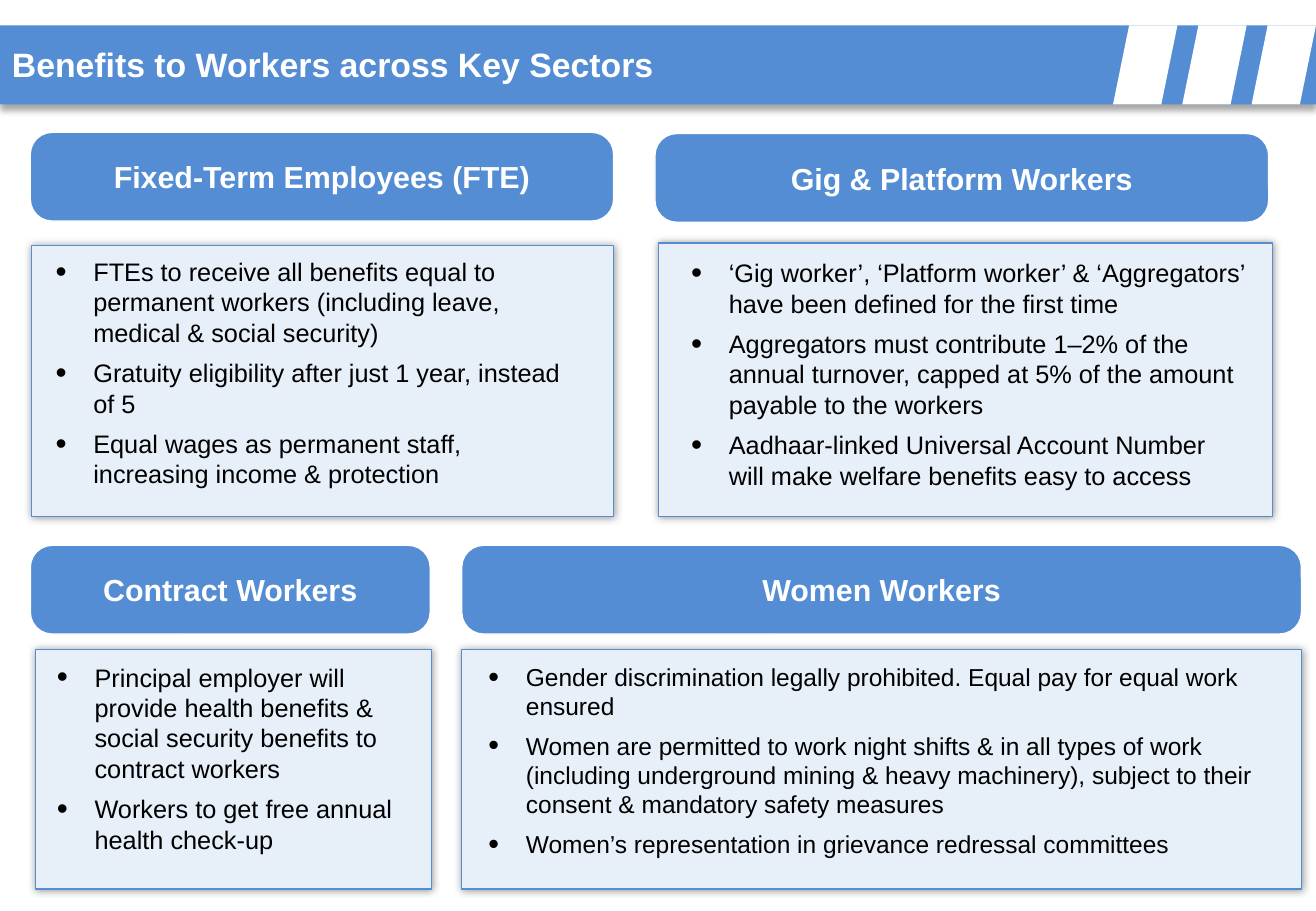
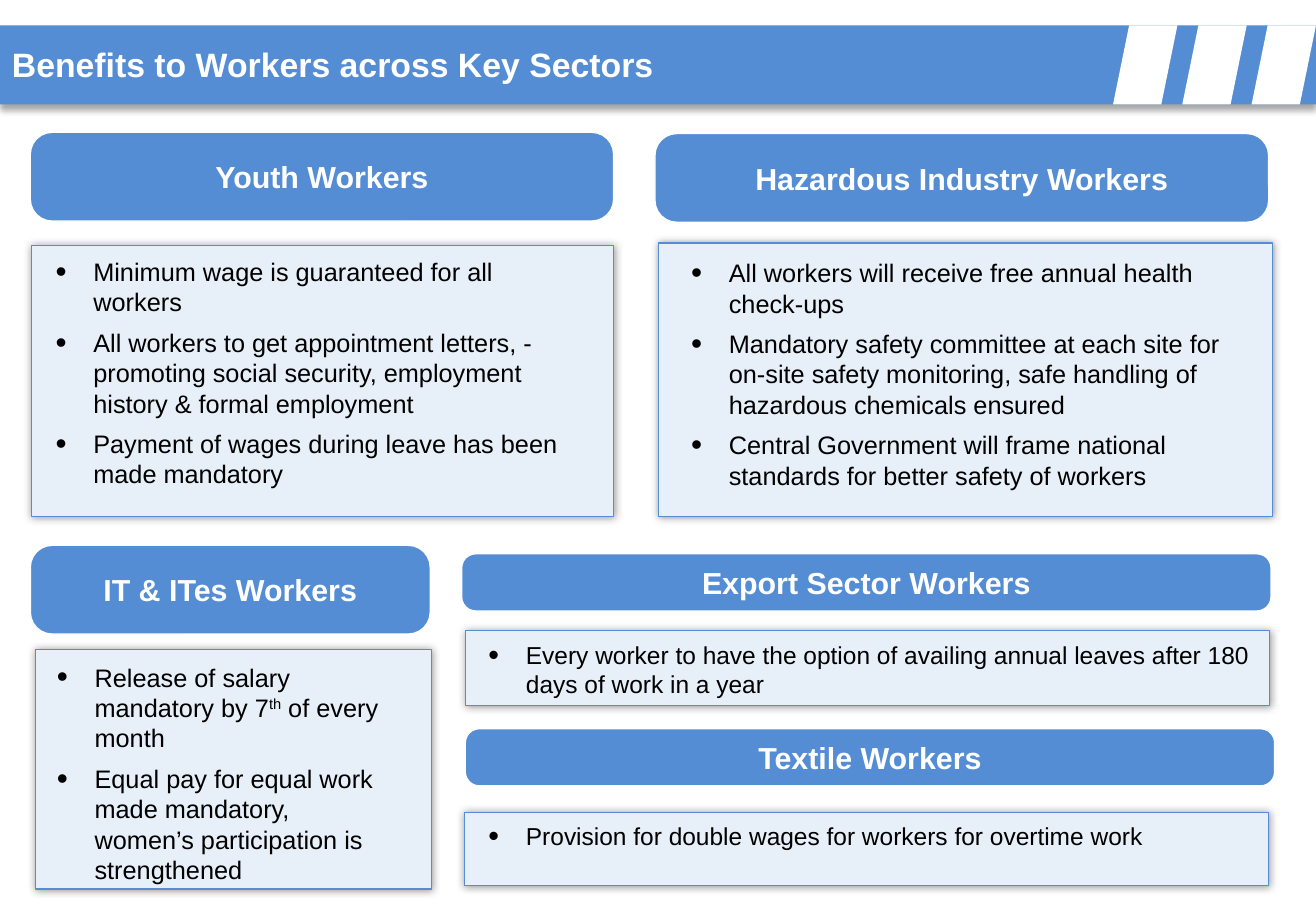
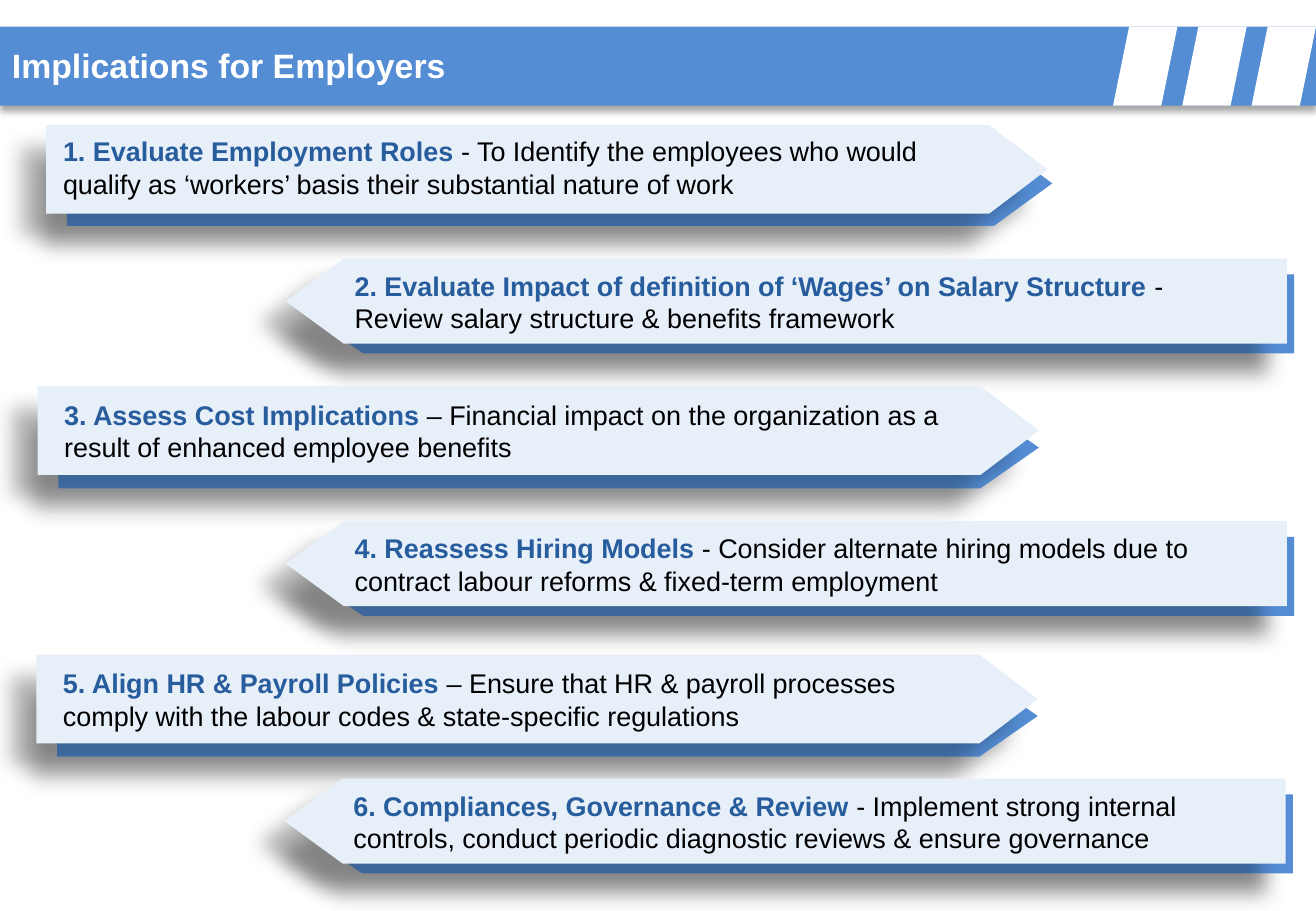
from dataclasses import dataclass

from lxml.etree import SubElement
from pptx import Presentation
from pptx.dml.color import RGBColor as RGB
from pptx.enum.shapes import MSO_SHAPE as Preset
from pptx.enum.text import MSO_ANCHOR as Anchor, MSO_AUTO_SIZE as AutoSize, PP_ALIGN as Align
from pptx.oxml.ns import qn
from pptx.util import Inches, Pt


# Colours, type sizes and effects
@dataclass(frozen=True)
class Theme:
    font: str = "Arial"
    blue: str = "548DD4"
    pale: str = "E7EFF9"
    navy: str = "275C9D"
    white: str = "FFFFFF"
    black: str = "000000"
    title: float = 20
    heading: float = 18
    ribbon: float = 16
    body: float = 15
    body_wide: float = 14.5
    bullet_gap: float = 6
    bullet_indent: float = 0.31
    # Shadows: opacity %, blur pt, distance pt, direction in degrees
    band_shadow: tuple = (35, 4, 3, 90)
    panel_shadow: tuple = (40, 5, 0, 0)
    ribbon_shadow: tuple = (28, 11.8, 19.7, 141)


THEME = Theme()


# Places of a card's heading, panel and text: left, top, width, height
@dataclass(frozen=True)
class Slot:
    heading: tuple
    panel: tuple
    text: tuple
    size: float = THEME.body


TOP_LEFT = Slot((0.25, 1.09, 4.8, 0.73), (0.26, 2.02, 4.79, 2.23), (0.36, 2.06, 4.52, 2.04))
TOP_RIGHT = Slot((5.39, 1.1, 5.05, 0.73), (5.42, 2, 5.05, 2.25), (5.59, 2.07, 4.77, 2.04))
LOW_LEFT = Slot((0.25, 4.49, 3.29, 0.73), (0.29, 5.35, 3.26, 1.97), (0.37, 5.4, 2.98, 1.7))
LOW_RIGHT = Slot((3.8, 4.49, 6.91, 0.73), (3.8, 5.35, 6.91, 1.97), (3.92, 5.4, 6.8, 1.73),
                 THEME.body_wide)
MID_STRIP = Slot((3.8, 4.56, 6.66, 0.47), (3.83, 5.19, 6.62, 0.62), (3.92, 5.22, 6.54, 0.59),
                 THEME.body_wide)
LOW_STRIP = Slot((3.83, 6, 6.66, 0.47), (3.82, 6.69, 6.62, 0.6), (3.92, 6.71, 6.54, 0.35),
                 THEME.body_wide)


# A ribbon's face size, with its back and label placed relative to the face
@dataclass(frozen=True)
class Ribbon:
    points_right: bool
    face: tuple
    back: tuple
    label: tuple


FIRST = Ribbon(True, (8.24, 0.73), (0.17, 0.13, 8.11, 0.7), (0.04, 0.03, 7.78, 0.64))
RIGHT = Ribbon(True, (8.24, 0.73), (0.17, 0.17, 8.07, 0.67), (0.12, 0.05, 7.64, 0.64))
LEFT = Ribbon(False, (8.24, 0.7), (0.16, 0.13, 8.14, 0.65), (0.47, 0.04, 7.63, 0.64))
TIP = 0.48


def add_bullet(paragraph):
    props = paragraph._p.get_or_add_pPr()
    props.set("marL", str(Inches(THEME.bullet_indent)))
    props.set("indent", str(-Inches(THEME.bullet_indent)))
    SubElement(SubElement(props, qn("a:buClr")), qn("a:srgbClr"), val=THEME.black)
    SubElement(props, qn("a:buSzPct"), val="125000")
    SubElement(props, qn("a:buFont"), typeface=THEME.font)
    SubElement(props, qn("a:buChar"), char="•")


def write(frame, paragraphs, *, size, color=THEME.black, bold=False, align=Align.LEFT,
          anchor=Anchor.TOP, bullets=False, grow=True):
    """A paragraph is a string or a list of runs; a run is a string or (string, changes)."""
    frame.word_wrap = True
    frame.vertical_anchor = anchor
    frame.auto_size = AutoSize.SHAPE_TO_FIT_TEXT if grow else AutoSize.NONE
    for index, runs in enumerate(paragraphs):
        paragraph = frame.add_paragraph() if index else frame.paragraphs[0]
        paragraph.alignment = align
        if bullets:
            add_bullet(paragraph)
        if index:
            paragraph.space_before = Pt(THEME.bullet_gap)
        for item in [runs] if isinstance(runs, str) else runs:
            words, changes = (item, {}) if isinstance(item, str) else item
            run = paragraph.add_run()
            run.text = words
            run.font.name = THEME.font
            run.font.size = Pt(size)
            run.font.bold = changes.get("bold", bold)
            run.font.color.rgb = RGB.from_string(changes.get("color", color))
            if "baseline" in changes:
                run.font._element.set("baseline", str(changes["baseline"] * 1000))


class Deck:
    def __init__(self, width, height):
        self.show = Presentation()
        self.show.slide_width, self.show.slide_height = Inches(width), Inches(height)
        self.width = width
        self.slide = None

    def new_slide(self, title, band_top):
        self.slide = self.show.slides.add_slide(self.show.slide_layouts[6])
        self.title_band(title, band_top)

    def style(self, shape, fill, line=None, shadow=None):
        shape.fill.solid()
        shape.fill.fore_color.rgb = RGB.from_string(fill)
        if line:
            shape.line.color.rgb = RGB.from_string(line)
            shape.line.width = Pt(0.75)
        else:
            shape.line.fill.background()
        shape.shadow.inherit = False
        if shadow:
            opacity, blur, distance, angle = shadow
            effects = shape.element.spPr.find(qn("a:effectLst"))
            outer = SubElement(effects, qn("a:outerShdw"), blurRad=str(Pt(blur)),
                               dist=str(Pt(distance)), dir=str(angle * 60000),
                               algn="ctr", rotWithShape="0")
            tint = SubElement(outer, qn("a:srgbClr"), val=THEME.black)
            SubElement(tint, qn("a:alpha"), val=str(opacity * 1000))
        return shape

    def block(self, preset, box, fill, line=None, shadow=None, group=None):
        shapes = (group or self.slide).shapes
        return self.style(shapes.add_shape(preset, *map(Inches, box)), fill, line, shadow)

    def text(self, box, paragraphs, **form):
        write(self.slide.shapes.add_textbox(*map(Inches, box)).text_frame, paragraphs, **form)

    def title_band(self, title, top):
        band = self.slide.shapes.add_group_shape()
        self.block(Preset.RECTANGLE, (0, top, self.width, 0.65), THEME.blue,
                   shadow=THEME.band_shadow, group=band)
        for step in range(3):
            self.block(Preset.PARALLELOGRAM, (9.16 + 0.57 * step, top, 0.53, 0.65),
                       THEME.white, group=band)
        self.text((0, top + 0.1, 8.94, 0.44), [title], size=THEME.title,
                  color=THEME.white, bold=True)

    def card(self, slot, heading, points):
        self.block(Preset.RECTANGLE, slot.panel, THEME.pale, THEME.blue, THEME.panel_shadow)
        self.text(slot.text, points, size=slot.size, bullets=True)
        tab = self.block(Preset.ROUNDED_RECTANGLE, slot.heading, THEME.blue, THEME.white)
        tab.adjustments[0] = 0.246
        write(tab.text_frame, [heading], size=THEME.heading, color=THEME.white, bold=True,
              align=Align.CENTER, anchor=Anchor.MIDDLE, grow=False)

    def arrow(self, box, points_right, fill):
        left, top, width, height = box
        tip, flat = (left + width, left) if points_right else (left, left + width)
        neck = tip - TIP if points_right else tip + TIP
        bottom = top + height
        corners = [(flat, top), (flat, bottom), (neck, bottom), (tip, top + height / 2)]
        outline = self.slide.shapes.build_freeform(Inches(neck), Inches(top))
        outline.add_line_segments([(Inches(x), Inches(y)) for x, y in corners], close=True)
        self.style(outline.convert_to_shape(), fill, shadow=THEME.ribbon_shadow)

    def ribbon(self, kind, left, top, lead, detail):
        def placed(part):
            return left + part[0], top + part[1], part[2], part[3]

        self.arrow(placed(kind.back), kind.points_right, THEME.blue)
        self.arrow((left, top, *kind.face), kind.points_right, THEME.pale)
        label = self.block(Preset.RECTANGLE, placed(kind.label), THEME.pale)
        write(label.text_frame, [[(lead, {"bold": True, "color": THEME.navy}), detail]],
              size=THEME.ribbon)


# Content
SECTORS = [
    [
        (TOP_LEFT, "Fixed-Term Employees (FTE)", [
            "FTEs to receive all benefits equal to permanent workers (including leave, "
            "medical & social security)",
            "Gratuity eligibility after just 1 year, instead of 5",
            "Equal wages as permanent staff, increasing income & protection"]),
        (TOP_RIGHT, "Gig & Platform Workers", [
            "‘Gig worker’, ‘Platform worker’ & ‘Aggregators’ have been defined for the first time",
            "Aggregators must contribute 1–2% of the annual turnover, capped at 5% of the "
            "amount payable to the workers",
            "Aadhaar-linked Universal Account Number will make welfare benefits easy to access"]),
        (LOW_LEFT, "Contract Workers", [
            "Principal employer will provide health benefits & social security benefits to "
            "contract workers",
            "Workers to get free annual health check-up"]),
        (LOW_RIGHT, "Women Workers", [
            "Gender discrimination legally prohibited. Equal pay for equal work ensured",
            "Women are permitted to work night shifts & in all types of work (including "
            "underground mining & heavy machinery), subject to their consent & mandatory "
            "safety measures",
            "Women’s representation in grievance redressal committees"]),
    ],
    [
        (TOP_LEFT, "Youth Workers", [
            "Minimum wage is guaranteed for all workers",
            "All workers to get appointment letters, - promoting social security, employment "
            "history & formal employment",
            "Payment of wages during leave has been made mandatory"]),
        (TOP_RIGHT, "Hazardous Industry Workers", [
            "All workers will receive free annual health check-ups",
            "Mandatory safety committee at each site for on-site safety monitoring, safe "
            "handling of hazardous chemicals ensured",
            "Central Government will frame national standards for better safety of workers"]),
        (LOW_LEFT, "IT & ITes Workers", [
            ["Release of salary mandatory by 7", ("th", {"baseline": 30}), " of every month"],
            "Equal pay for equal work made mandatory, women’s participation is strengthened"]),
        (MID_STRIP, "Export Sector Workers", [
            "Every worker to have the option of availing annual leaves after 180 days of "
            "work in a year"]),
        (LOW_STRIP, "Textile Workers", [
            "Provision for double wages for workers for overtime work"]),
    ],
]

IMPLICATIONS = [
    (FIRST, 0.38, 1.03, "1. Evaluate Employment Roles",
     " - To Identify the employees who would qualify as ‘workers’ basis their substantial "
     "nature of work"),
    (LEFT, 2.35, 2.13, "2. Evaluate Impact of definition of ‘Wages’ on Salary Structure",
     " - Review salary structure & benefits framework"),
    (RIGHT, 0.31, 3.18, "3. Assess Cost Implications",
     " – Financial impact on the organization as a result of enhanced employee benefits"),
    (LEFT, 2.35, 4.29, "4. Reassess Hiring Models",
     " - Consider alternate hiring models due to contract labour reforms & fixed-term "
     "employment"),
    (RIGHT, 0.3, 5.39, "5. Align HR & Payroll Policies",
     " – Ensure that HR & payroll processes comply with the labour codes & state-specific "
     "regulations"),
    (LEFT, 2.34, 6.41, "6. Compliances, Governance & Review",
     " - Implement strong internal controls, conduct periodic diagnostic reviews & ensure "
     "governance"),
]


def main():
    deck = Deck(10.83, 7.5)

    # Benefits by sector
    for cards in SECTORS:
        deck.new_slide("Benefits to Workers across Key Sectors", 0.21)
        for card in cards:
            deck.card(*card)

    # Steps for employers
    deck.new_slide("Implications for Employers", 0.22)
    for implication in IMPLICATIONS:
        deck.ribbon(*implication)

    deck.show.save("out.pptx")


if __name__ == "__main__":
    main()
